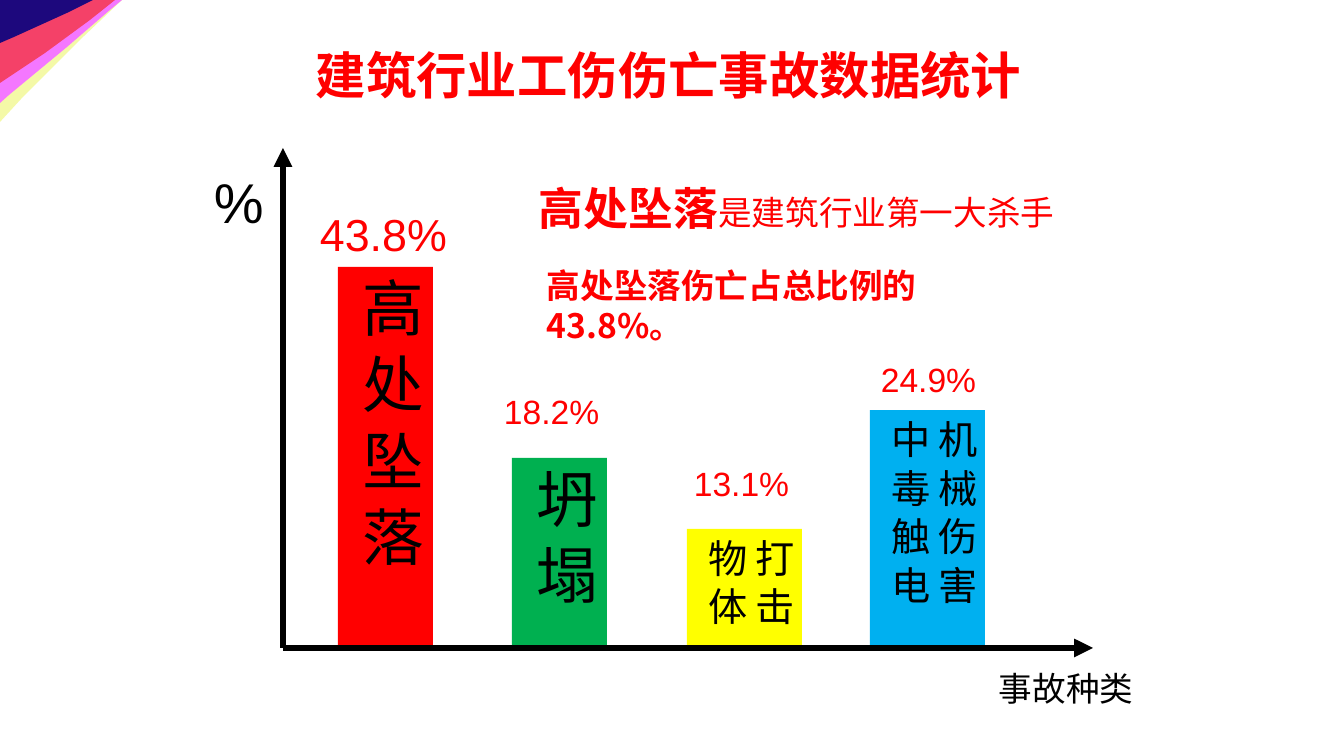
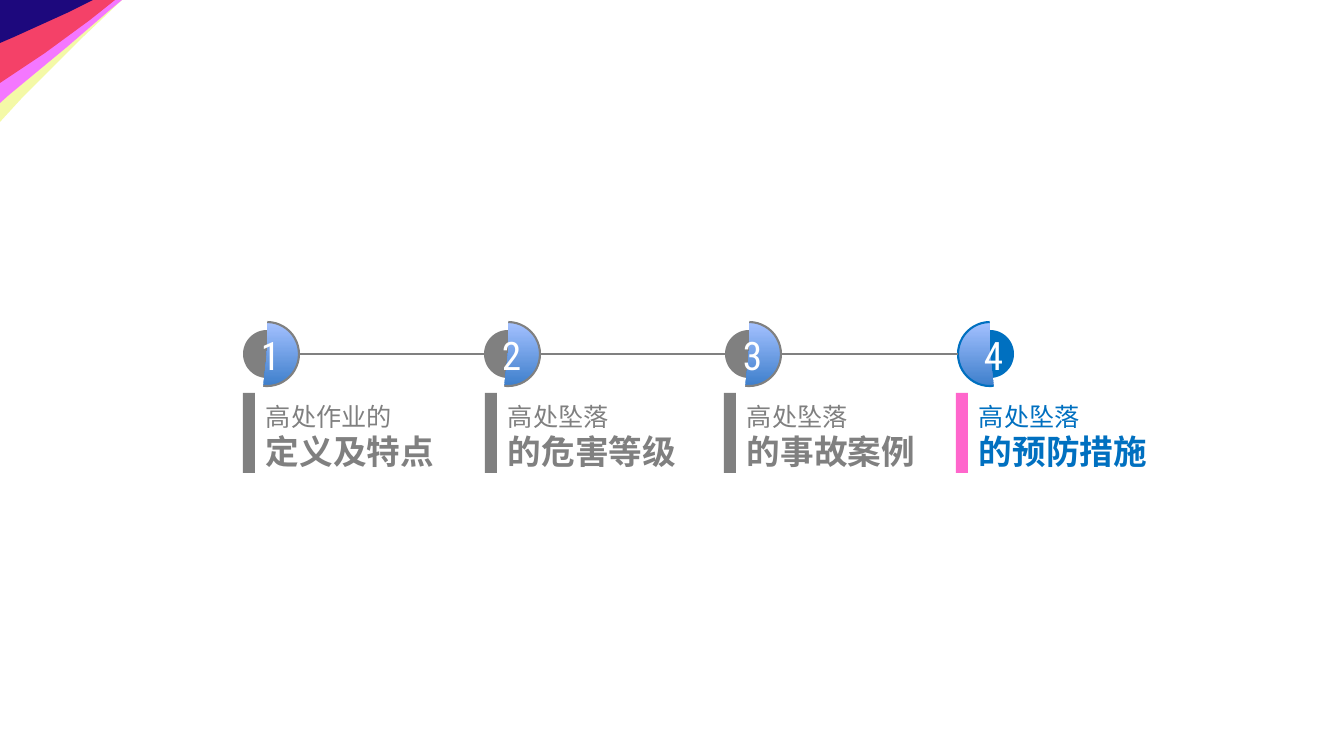
from lxml import etree
from pptx import Presentation
from pptx.dml.color import RGBColor
from pptx.enum.shapes import MSO_CONNECTOR, MSO_SHAPE
from pptx.enum.text import MSO_ANCHOR, MSO_AUTO_SIZE, PP_ALIGN
from pptx.oxml.ns import qn
from pptx.util import Pt

RECT, OVAL, ARC = MSO_SHAPE.RECTANGLE, MSO_SHAPE.OVAL, MSO_SHAPE.ARC
LINE = MSO_CONNECTOR.STRAIGHT
TOP, FIT = MSO_ANCHOR.TOP, MSO_AUTO_SIZE.SHAPE_TO_FIT_TEXT
LEFT, MID = PP_ALIGN.LEFT, PP_ALIGN.CENTER

PX = 9071
SANS, HAN, SLIM = "Arial", "Noto Sans CJK SC", "Roboto Condensed"
RED, BLACK, WHITE = "FF0000", "000000", "FFFFFF"
GREY, BLUE, PINK = "808080", "0070C0", "FF66CC"


def paint(fill, tone):
    fill.solid()
    fill.fore_color.rgb = RGBColor.from_string(tone)


def write(frame, rows, tone, gap=0, align=LEFT, **body):
    """Fill a frame with rows of (text, format) runs; gap is a percentage."""
    for key, val in body.items():
        setattr(frame, key, val)
    for i, row in enumerate(rows):
        para = frame.add_paragraph() if i else frame.paragraphs[0]
        para.alignment = align
        if gap:
            space = etree.SubElement(para._p.get_or_add_pPr(), qn("a:spcBef"))
            etree.SubElement(space, qn("a:spcPct")).set("val", str(gap * 1000))
        for text, form in row:
            for j, part in enumerate(text.split("\n")):
                if j:
                    para.add_line_break()
                run = para.add_run()
                run.text = part
                for key, val in form.items():
                    setattr(run.font, key, val)
                paint(run.font.fill, tone)
                east = etree.SubElement(run.font._element, qn("a:ea"))
                east.set("typeface", HAN)


deck = Presentation()
deck.slide_width, deck.slide_height = 1344 * PX, 756 * PX
stats = deck.slides.add_slide(deck.slide_layouts[5])
steps = deck.slides.add_slide(deck.slide_layouts[6])

# Corner fan, shared through the master
fan = [
    ("F4F9A7", [(122, 0), (81, 39), (22, 98), (0, 122)]),
    ("F477FF", [(122, 0), (110, 10), (67, 47), (9, 95), (0, 103)]),
    ("F44168", [(115, 0), (90, 20), (45, 53), (0, 83)]),
    ("1D087D", [(93, 0), (69, 12), (14, 37), (0, 43)]),
]
for tone, edge in fan:
    pen = stats.shapes.build_freeform(0, 0, scale=PX)
    pen.add_line_segments(edge, close=True)
    blade = pen.convert_to_shape()
    blade.shadow.inherit = False
    blade.line.fill.background()
    paint(blade.fill, tone)
    deck.slide_master.shapes.element.append(blade.element)

# Accident statistics
title = stats.shapes.title
title.left, title.top, title.width, title.height = (v * PX for v in (183, 36, 971, 76))
bold = dict(name=SANS, size=Pt(36), bold=True)
write(title.text_frame, [[("建筑行业工伤伤亡事故数据统计", bold)]], RED, align=MID)

floor = 648
bars = [
    (338, 95, 381, RED, "高 处 坠 落", 44, HAN),
    (512, 95, 190, "00B050", "坍 塌", 44, SANS),
    (687, 115, 119, "FFFF00", "打 击\n物 体", 28, HAN),
    (870, 115, 238, "00B0F0", "机 械 伤 害\n中 毒 触 电", 28, HAN),
]
for left, wide, high, tone, text, size, face in bars:
    at = left, floor - high, wide, high
    bar = stats.shapes.add_shape(RECT, *(v * PX for v in at))
    bar.shadow.inherit = False
    bar.line.fill.background()
    paint(bar.fill, tone)
    bar.element.txBody.bodyPr.set("vert", "eaVert")
    write(bar.text_frame, [[(text, dict(name=face, size=Pt(size)))]], BLACK,
          gap=50, word_wrap=True, vertical_anchor=TOP, auto_size=FIT)

notes = [
    ((204, 163, 64, 64), "%", 40, BLACK),
    ((989, 663, 187, 47), "事故种类", 24, BLACK),
    ((310, 202, 199, 55), "43.8%", 32, RED),
    ((494, 386, 168, 55), "18.2%", 24, RED),
    ((684, 458, 182, 55), "13.1%", 24, RED),
    ((871, 354, 187, 55), "24.9%", 24, RED),
]
for at, text, size, tone in notes:
    note = stats.shapes.add_textbox(*(v * PX for v in at))
    write(note.text_frame, [[(text, dict(name=SANS, size=Pt(size)))]], tone,
          gap=20, word_wrap=True)

claims = [
    ((529, 176, 553, 65), [
        ("高处坠落", dict(name=SANS, size=Pt(32), bold=True)),
        ("是建筑行业第一大杀手", dict(name=SANS, size=Pt(24)))]),
    ((537, 260, 508, 92), [
        ("高处坠落伤亡占总比例的43.8%。", dict(name=HAN, size=Pt(24), bold=True))]),
]
for at, row in claims:
    claim = stats.shapes.add_textbox(*(v * PX for v in at))
    write(claim.text_frame, [row], RED, gap=50, word_wrap=True, auto_size=FIT)

lines = [
    (stats, (283, floor, 283, 148), BLACK, 4.5, True),
    (stats, (283, floor, 1093, floor), BLACK, 4.5, True),
]

# Four chapters, the last one current
mids = [267 + 241 * i for i in range(4)]
parts = [
    (243, "高处作业的", "定义及特点"),
    (485, "高处坠落", "的危害等级"),
    (724, "高处坠落", "的事故案例"),
    (956, "高处坠落", "的预防措施"),
]
for i, (mid, (left, lead, main)) in enumerate(zip(mids, parts)):
    last = i == len(parts) - 1
    tone = BLUE if last else GREY
    marks = [
        (OVAL, (mid - 24, 330, 48, 48), tone),
        (ARC, (mid - 32, 322, 64, 64), None),
        (RECT, (left, 393, 12, 80), PINK if last else GREY),
    ]
    for kind, at, fill in marks:
        mark = steps.shapes.add_shape(kind, *(v * PX for v in at))
        mark.shadow.inherit = False
        if fill:
            paint(mark.fill, fill)
            mark.line.fill.background()
        else:
            mark.adjustments[0], mark.adjustments[1] = 162.3, 57.98
            mark.line.width = Pt(1.5)
            paint(mark.line.fill, tone)
            if last:
                mark.element.spPr.xfrm.set("flipH", "1")
    texts = [
        ((mid - 16, 326, 36, 57), WHITE,
         [[(str(i + 1), dict(name=SLIM, size=Pt(28)))]]),
        ((left + 13, 396, 188, 82), tone,
         [[(lead, dict(name=SANS, size=Pt(18)))],
          [(main, dict(name=SANS, size=Pt(24), bold=True))]]),
    ]
    for at, ink, rows in texts:
        label = steps.shapes.add_textbox(*(v * PX for v in at))
        write(label.text_frame, rows, ink, word_wrap=False, auto_size=FIT)
    if not last:
        end = mids[i + 1] - (32 if i == 2 else 24)
        lines.append((steps, (mid + 32, 354, end, 354), GREY, 1.5, False))

# Axes and links
for slide, ends, tone, width, arrow in lines:
    line = slide.shapes.add_connector(LINE, *(v * PX for v in ends))
    line.line.width = Pt(width)
    paint(line.line.fill, tone)
    if arrow:
        etree.SubElement(line.line._get_or_add_ln(), qn("a:tailEnd")).set("type", "triangle")
    etree.SubElement(line.element.spPr, qn("a:effectLst"))

deck.save("out.pptx")
